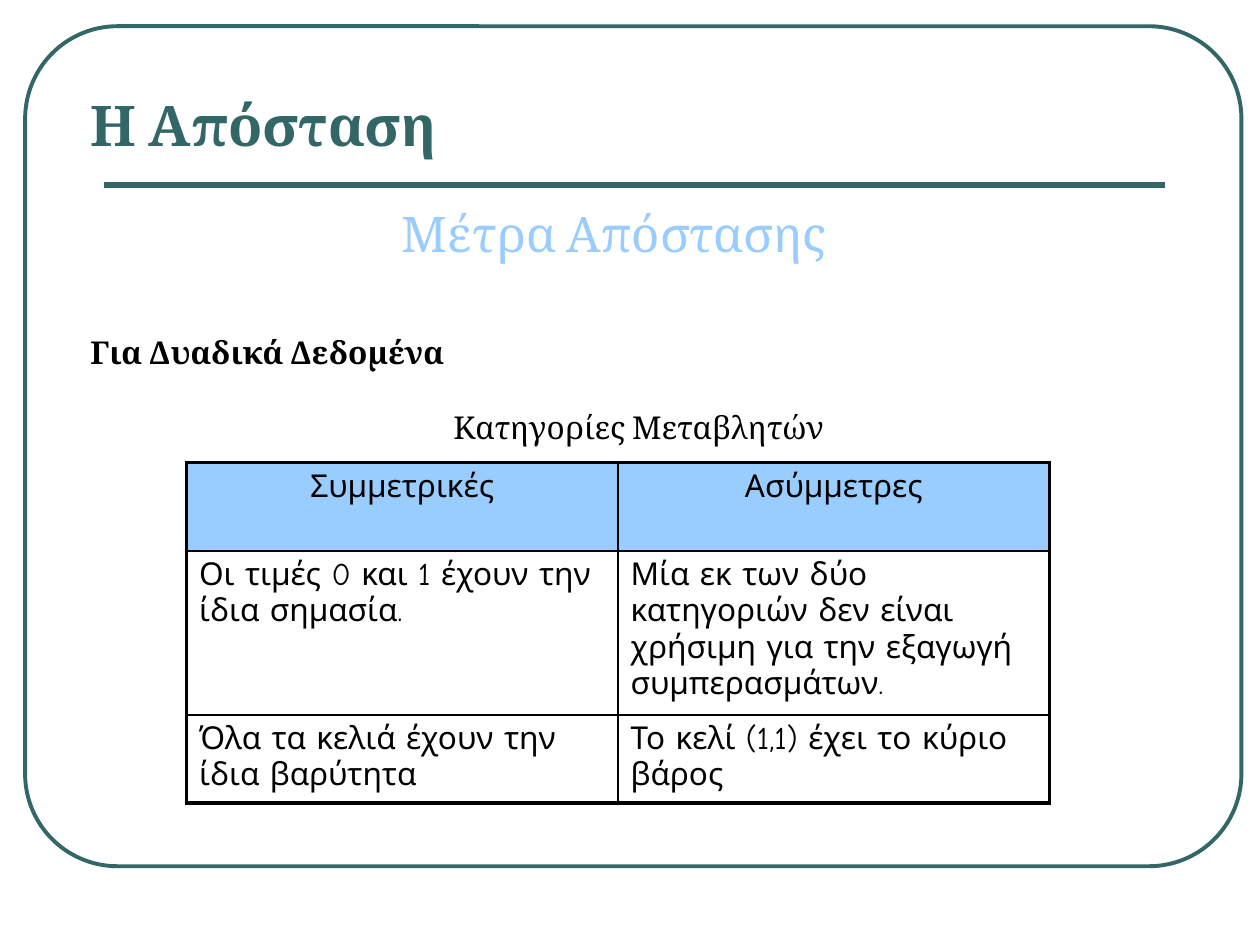
"""Build a slide on distance measures for binary data."""
from dataclasses import dataclass

from pptx import Presentation
from pptx.dml.color import RGBColor
from pptx.enum import shapes as es, text as et
from pptx.oxml import ns, xmlchemy as xc
from pptx.util import Pt

HUES = {"teal": "336666", "sky": "99CCFF", "ink": "000000", "white": "FFFFFF"}
SERIF, COMIC = "Cambria", "Comic Neue"
LEFT, MID = et.PP_ALIGN.LEFT, et.PP_ALIGN.CENTER
THICK, THIN = 2.25, 1


@dataclass
class Line:
    text: str
    size: float = 18
    hue: str = "ink"
    bold: bool = False
    align: et.PP_ALIGN = LEFT
    font: str = SERIF
    gap: float = 0


@dataclass
class Note:
    box: tuple[float, float, float, float]
    lines: list[Line]
    inset: float = 7.2


NOTES = [
    Note((214.5, 113, 317.5, 41),
         [Line("Μέτρα Απόστασης", 28, "sky", align=MID)], 52),
    Note((44.6, 186.5, 641, 72),
         [Line("Για Δυαδικά Δεδομένα", bold=True),
          Line("Κατηγορίες Μεταβλητών", align=MID, gap=21.4)]),
]
ROWS = [
    ("Συμμετρικές", "Ασύμμετρες"),
    ("Οι τιμές 0 και 1 έχουν την ίδια σημασία.",
     "Μία εκ των δύο κατηγοριών δεν είναι χρήσιμη για την εξαγωγή "
     "συμπερασμάτων."),
    ("Όλα τα κελιά έχουν την ίδια βαρύτητα",
     "Το κελί (1,1) έχει το κύριο βάρος"),
]
HIGHS = (50.5, 93.75, 50.25)
WIDE = 246.6


def tint(name: str) -> RGBColor:
    """Return a named colour."""
    return RGBColor.from_string(HUES[name])


def write(frame, lines: list[Line]) -> None:
    """Fill a text frame with one run for each line."""
    frame.word_wrap = True
    for i, line in enumerate(lines):
        para = frame.add_paragraph() if i else frame.paragraphs[0]
        para.alignment = line.align
        para.space_before = Pt(line.gap)
        run = para.add_run()
        run.text = line.text
        font = run.font
        font.name, font.size, font.bold = line.font, Pt(line.size), line.bold
        font.color.rgb = tint(line.hue)


def frame_page(slide) -> None:
    """Draw the rounded border and the rule below the title."""
    edge = slide.shapes.add_shape(es.MSO_SHAPE.ROUNDED_RECTANGLE,
                                  Pt(14.4), Pt(15), Pt(695), Pt(480))
    edge.adjustments[0] = 0.11
    edge.shadow.inherit = False
    edge.fill.background()
    rule = slide.shapes.add_connector(es.MSO_CONNECTOR.STRAIGHT,
                                      Pt(59.5), Pt(105.75), Pt(665.5), Pt(105.75))
    xc.OxmlElement  # noqa: B018
    rule.line.color.rgb = edge.line.color.rgb = tint("teal")
    edge.line.width, rule.line.width = Pt(THICK), Pt(3)
    rule._element.spPr.append(xc.OxmlElement("a:effectLst"))


def add_title(slide) -> None:
    """Place and format the title."""
    title = slide.shapes.title
    title.left, title.top, title.width, title.height = map(Pt, (44.6, 34, 540.5, 60))
    frame = title.text_frame
    frame.vertical_anchor = et.MSO_ANCHOR.BOTTOM
    write(frame, [Line("Η Απόσταση", 32, "teal", True)])


def add_note(slide, note: Note) -> None:
    """Add one text box."""
    frame = slide.shapes.add_textbox(*map(Pt, note.box)).text_frame
    frame.margin_right = Pt(note.inset)
    write(frame, note.lines)


def rim(cell, sides: dict[str, float]) -> None:
    """Set the border widths of a cell."""
    props = cell._tc.get_or_add_tcPr()
    for i, (side, width) in enumerate(sides.items()):
        line = xc.OxmlElement(f"a:ln{side}")
        line.set("w", str(Pt(width)))
        fill = xc.OxmlElement("a:solidFill")
        hue = xc.OxmlElement("a:srgbClr")
        hue.set("val", HUES["ink"])
        fill.append(hue)
        line.append(fill)
        props.insert(i, line)


def add_grid(slide) -> None:
    """Add the table of variable kinds."""
    rows, cols = len(ROWS), len(ROWS[0])
    grid = slide.shapes.add_table(rows, cols, Pt(106.6), Pt(264.25),
                                  Pt(WIDE * cols), Pt(sum(HIGHS))).table
    grid.first_row = grid.horz_banding = False
    for col in grid.columns:
        col.width = Pt(WIDE)
    for r, (words, high) in enumerate(zip(ROWS, HIGHS)):
        grid.rows[r].height = Pt(high)
        for c, word in enumerate(words):
            cell = grid.cell(r, c)
            cell.fill.solid()
            cell.fill.fore_color.rgb = tint("white" if r else "sky")
            write(cell.text_frame,
                  [Line(word, align=LEFT if r else MID, font=COMIC)])
            outer = {"L": c == 0, "R": c == cols - 1,
                     "T": r == 0, "B": r == rows - 1}
            rim(cell, {k: THICK if v else THIN for k, v in outer.items()})


def main() -> None:
    """Build and save the slide."""
    deck = Presentation()
    deck.slide_width, deck.slide_height = Pt(720), Pt(540)
    slide = deck.slides.add_slide(deck.slide_layouts[5])
    frame_page(slide)
    add_title(slide)
    for note in NOTES:
        add_note(slide, note)
    add_grid(slide)
    deck.save("out.pptx")


if __name__ == "__main__":
    main()
